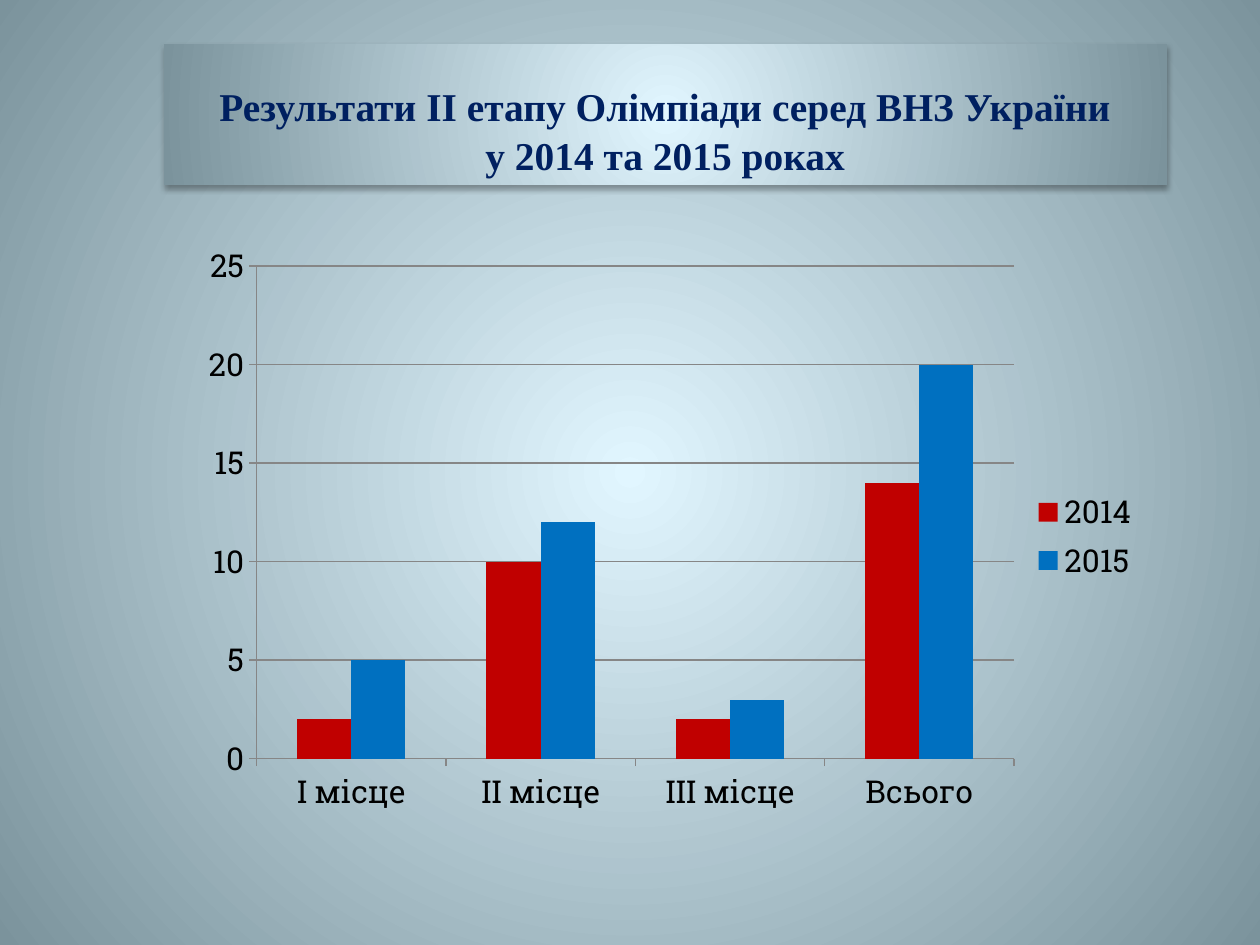
from pptx import Presentation
from pptx.chart.data import CategoryChartData
from pptx.dml.color import RGBColor
from pptx.enum.chart import XL_CHART_TYPE as ChartType, XL_LEGEND_POSITION as LegendPos, XL_TICK_MARK as Tick
from pptx.enum.text import MSO_ANCHOR, MSO_AUTO_SIZE, PP_ALIGN
from pptx.oxml import parse_xml
from pptx.oxml.ns import nsdecls, qn
from pptx.util import Pt

PX = 914400 / 126
COLORS = {
    "glow": "E1F6FF", "edge": "7B939C", "title": "002060", "text": "000000",
    "axis": "868686", "2014": "C00000", "2015": "0070C0",
}
PLACES = ["І місце", "ІІ місце", "ІІІ місце", "Всього"]
RESULTS = {"2014": (2, 10, 2, 14), "2015": (5, 12, 3, 20)}


def px(length):
    return round(length * PX)


def rgb(name):
    return RGBColor.from_string(COLORS[name])


def glow_fill(fill, owner):
    """Fill the owner with a circular gradient, light in the centre."""
    fill.solid()
    solid = owner.find(".//" + qn("a:solidFill"))
    gradient = parse_xml(
        f'<a:gradFill {nsdecls("a")} rotWithShape="1"><a:gsLst>'
        f'<a:gs pos="0"><a:srgbClr val="{COLORS["glow"]}"/></a:gs>'
        f'<a:gs pos="100000"><a:srgbClr val="{COLORS["edge"]}"/></a:gs></a:gsLst>'
        '<a:path path="circle"><a:fillToRect l="50000" t="50000" r="50000" b="50000"/>'
        '</a:path></a:gradFill>')
    solid.getparent().replace(solid, gradient)


def add_title(slide, left, top, width, height):
    title = slide.shapes.title
    title.left, title.top, title.width, title.height = map(px, (left, top, width, height))
    properties = title._element.spPr
    glow_fill(title.fill, properties)
    properties.append(parse_xml(
        f'<a:effectLst {nsdecls("a")}>'
        f'<a:outerShdw blurRad="{Pt(3.5)}" dist="{Pt(2.2)}" dir="5400000" rotWithShape="0">'
        f'<a:srgbClr val="{COLORS["text"]}"><a:alpha val="32000"/></a:srgbClr>'
        '</a:outerShdw></a:effectLst>'))

    frame = title.text_frame
    frame.text = "Результати ІІ етапу Олімпіади серед ВНЗ України\vу 2014 та 2015 роках"
    frame.auto_size = MSO_AUTO_SIZE.NONE
    frame.word_wrap = True
    frame.vertical_anchor = MSO_ANCHOR.BOTTOM
    heading = frame.paragraphs[0]
    heading.alignment = PP_ALIGN.CENTER
    heading.line_spacing = 1.04
    for run in heading.runs:
        run.font.name = "Times New Roman"
        run.font.size = Pt(22.5)
        run.font.bold = True
        run.font.color.rgb = rgb("title")


def set_plot_area(chart, x, y, w, h):
    """Fix the inner plot area as fractions of the chart."""
    plot_area = chart._chartSpace.chart.plotArea
    for old in plot_area.findall(qn("c:layout")):
        plot_area.remove(old)
    sizes = "".join(f'<c:{tag} val="{value}"/>'
                    for tag, value in zip("xywh", (x, y, w, h)))
    plot_area.insert(0, parse_xml(
        f'<c:layout {nsdecls("c")}><c:manualLayout><c:layoutTarget val="inner"/>'
        f'<c:xMode val="edge"/><c:yMode val="edge"/>{sizes}</c:manualLayout></c:layout>'))


def add_results_chart(slide, left, top, width, height):
    data = CategoryChartData()
    data.categories = PLACES
    for year, counts in RESULTS.items():
        data.add_series(year, counts)
    chart = slide.shapes.add_chart(
        ChartType.COLUMN_CLUSTERED, *map(px, (left, top, width, height)), data).chart
    chart.has_title = False
    chart.font.name = "Roboto Slab"
    chart.font.size = Pt(18)
    chart.font.color.rgb = rgb("text")
    set_plot_area(chart, 0.09, 0.05, 0.77, 0.82)

    # Columns
    plot = chart.plots[0]
    plot.vary_by_categories = False
    plot.gap_width, plot.overlap = 150, 0
    for series in plot.series:
        series.format.fill.solid()
        series.format.fill.fore_color.rgb = rgb(series.name)

    # Axes and gridlines
    counts_axis = chart.value_axis
    counts_axis.minimum_scale, counts_axis.maximum_scale = 0, 25
    counts_axis.major_unit = 5
    counts_axis.has_major_gridlines = True
    for axis in (chart.category_axis, counts_axis):
        axis.major_tick_mark = Tick.OUTSIDE
        axis.minor_tick_mark = Tick.NONE
    for part in (chart.category_axis, counts_axis, counts_axis.major_gridlines):
        part.format.line.color.rgb = rgb("axis")
        part.format.line.width = Pt(0.75)

    # Legend
    chart.has_legend = True
    chart.legend.position = LegendPos.RIGHT
    chart.legend.include_in_layout = False


def main():
    deck = Presentation()
    deck.slide_width, deck.slide_height = px(1260), px(945)
    slide = deck.slides.add_slide(deck.slide_layouts[5])
    glow_fill(slide.background.fill, slide._element.find(".//" + qn("p:bgPr")))
    add_title(slide, 164, 44, 1003, 141)
    add_results_chart(slide, 168, 236, 984, 601)
    deck.save("out.pptx")


if __name__ == "__main__":
    main()
